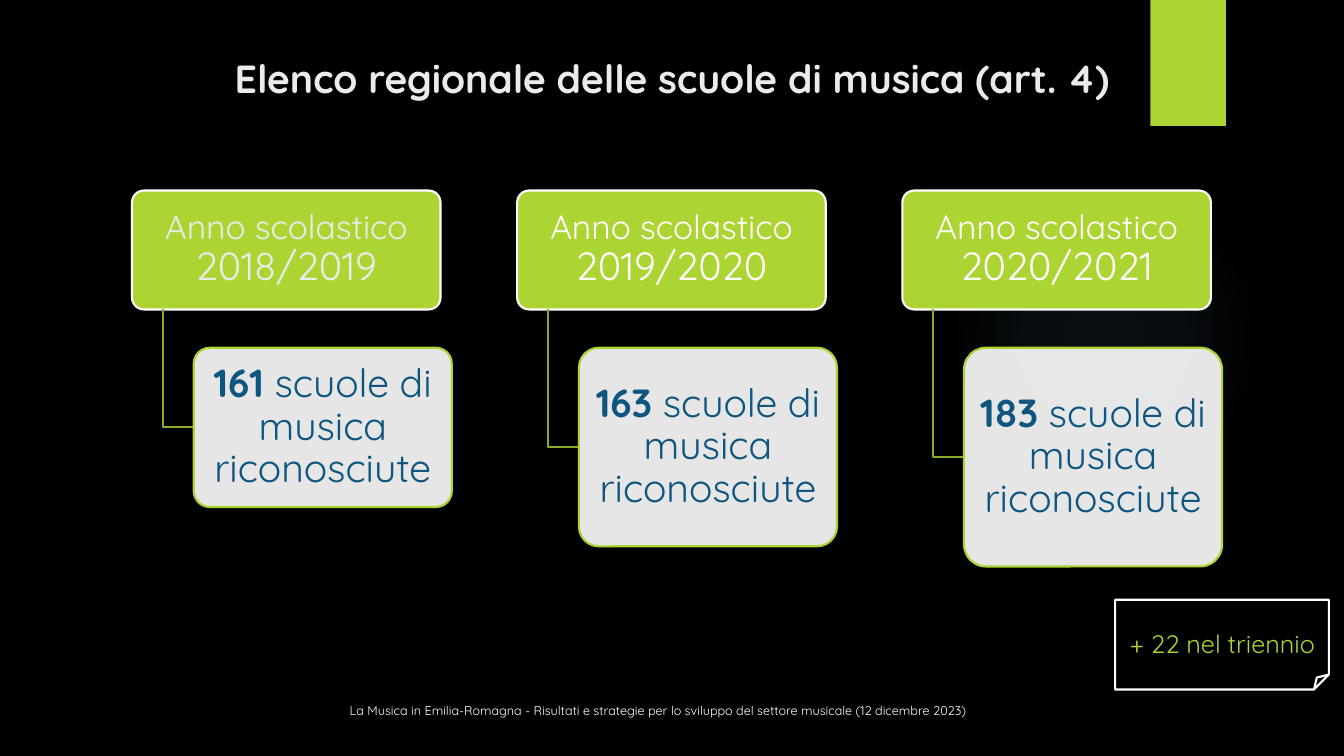
from lxml import etree
from pptx import Presentation
from pptx.dml.color import RGBColor
from pptx.enum.shapes import MSO_SHAPE
from pptx.enum.text import MSO_ANCHOR, PP_ALIGN
from pptx.oxml import parse_xml
from pptx.oxml.ns import nsdecls, qn
from pptx.util import Inches, Pt

# Content
TITLE = "Elenco regionale delle scuole di musica (art. 4)"
YEAR_LABEL = "Anno scolastico "
SCHOOLS_LABEL = " scuole di musica riconosciute"
# school year, year text colour, number of schools, box height
YEARS = [
    ("2018/2019", "EBEBEB", "161", 1.58),
    ("2019/2020", "FFFFFF", "163", 1.97),
    ("2020/2021", "FFFFFF", "183", 2.17),
]
GROWTH = "+ 22 nel triennio"
FOOTER = ("La Musica in Emilia-Romagna - Risultati e strategie per lo sviluppo "
          "del settore musicale (12 dicembre 2023)")

# Style and layout
FONT = "Quicksand"
GREEN, WHITE, BLUE, STEM = "ACD433", "FFFFFF", "0E5580", "8AAA29"
CENTER, LEFT = PP_ALIGN.CENTER, PP_ALIGN.LEFT
RECT, ROUNDED = MSO_SHAPE.RECTANGLE, MSO_SHAPE.ROUNDED_RECTANGLE
FOLDED, OVAL = MSO_SHAPE.FOLDED_CORNER, MSO_SHAPE.OVAL
COLUMN_LEFT, COLUMN_STEP = 1.31, 3.82
HEADER_TOP, HEADER_WIDTH, HEADER_HEIGHT = 1.89, 3.06, 1.18
STEM_INDENT = HEADER_WIDTH / 10
BOX_TOP, BOX_WIDTH = 3.45, 2.56


def color(value):
    return RGBColor.from_string(value)


def add_shape(kind, left, top, width, height, fill=None, line=None):
    shape = slide.shapes.add_shape(
        kind, Inches(left), Inches(top), Inches(width), Inches(height))
    shape.shadow.inherit = False
    if kind == ROUNDED:
        shape.adjustments[0] = 0.1
    if fill:
        shape.fill.solid()
        shape.fill.fore_color.rgb = color(fill)
    else:
        shape.fill.background()
    if line:
        shape.line.color.rgb = color(line)
        shape.line.width = Pt(1.5)
    else:
        shape.line.fill.background()
    return shape


def write(shape, runs, align=CENTER, inset=(0.1, 0.05), spacing=None):
    """Each run is (text, size, colour, bold)."""
    frame = shape.text_frame
    frame.word_wrap = True
    frame.vertical_anchor = MSO_ANCHOR.MIDDLE
    frame.margin_left = frame.margin_right = Inches(inset[0])
    frame.margin_top = frame.margin_bottom = Inches(inset[1])
    paragraph = frame.paragraphs[0]
    paragraph.alignment = align
    if spacing:
        paragraph.line_spacing = spacing
    for text, size, text_color, bold in runs:
        run = paragraph.add_run()
        run.text = text
        run.font.name = FONT
        run.font.size = Pt(size)
        run.font.bold = bold
        run.font.color.rgb = color(text_color)


def add_text(left, top, width, height, runs, align=CENTER):
    box = slide.shapes.add_textbox(
        Inches(left), Inches(top), Inches(width), Inches(height))
    write(box, runs, align)


presentation = Presentation()
presentation.slide_width = Inches(13.33)
presentation.slide_height = Inches(7.5)
slide = presentation.slides.add_slide(presentation.slide_layouts[6])
slide.background.fill.solid()
slide.background.fill.fore_color.rgb = color("000000")

# Faint glow and corner tab
glow = add_shape(OVAL, 9.41, 1.83, 3.08, 3.08)
stops = "".join(
    f'<a:gs pos="{position}000"><a:srgbClr val="7AC4F0">'
    f'<a:alpha val="{alpha}000"/></a:srgbClr></a:gs>'
    for position, alpha in [(0, 7), (36, 6), (69, 0), (100, 0)])
properties = glow.element.spPr
properties.replace(properties.find(qn("a:noFill")), parse_xml(
    f'<a:gradFill {nsdecls("a")}><a:gsLst>{stops}</a:gsLst><a:path path="circle">'
    '<a:fillToRect l="50000" t="50000" r="50000" b="50000"/></a:path></a:gradFill>'))
add_shape(RECT, 11.41, 0, 0.75, 1.25, GREEN)

# Title and footer
add_text(1.35, 0.18, 10.63, 1.18, [(TITLE, 28, "EBEBEB", True)])
add_text(3.37, 6.9, 6.69, 0.3, [(FOOTER, 9, WHITE, False)], LEFT)

# One column per school year
for index, (year, year_color, schools, box_height) in enumerate(YEARS):
    left = COLUMN_LEFT + index * COLUMN_STEP
    header = add_shape(ROUNDED, left, HEADER_TOP, HEADER_WIDTH, HEADER_HEIGHT,
                       GREEN, WHITE)
    write(header, [(YEAR_LABEL, 24, year_color, False),
                   (year, 28, year_color, False)], inset=(0.05, 0.03), spacing=0.9)

    stem_left = left + STEM_INDENT
    box_left = stem_left + STEM_INDENT
    middle = BOX_TOP + box_height / 2
    builder = slide.shapes.build_freeform(
        Inches(stem_left), Inches(HEADER_TOP + HEADER_HEIGHT))
    builder.add_line_segments(
        [(Inches(stem_left), Inches(middle)), (Inches(box_left), Inches(middle))],
        close=False)
    stem = builder.convert_to_shape()
    stem.shadow.inherit = False
    stem.fill.background()
    stem.line.color.rgb = color(STEM)
    stem.line.width = Pt(1.5)

    box = add_shape(ROUNDED, box_left, BOX_TOP, BOX_WIDTH, box_height, WHITE, GREEN)
    fill_color = box.element.spPr.find(qn("a:solidFill"))[0]
    etree.SubElement(fill_color, qn("a:alpha")).set("val", "90000")
    write(box, [(schools, 28, BLUE, True), (SCHOOLS_LABEL, 28, BLUE, False)],
          inset=(0.06, 0.04), spacing=0.9)

# Growth note
add_shape(FOLDED, 11.06, 5.95, 2.12, 0.89, line=WHITE)
add_text(11.06, 6.18, 2.13, 0.4, [(GROWTH, 18, GREEN, False)])

presentation.save("out.pptx")
